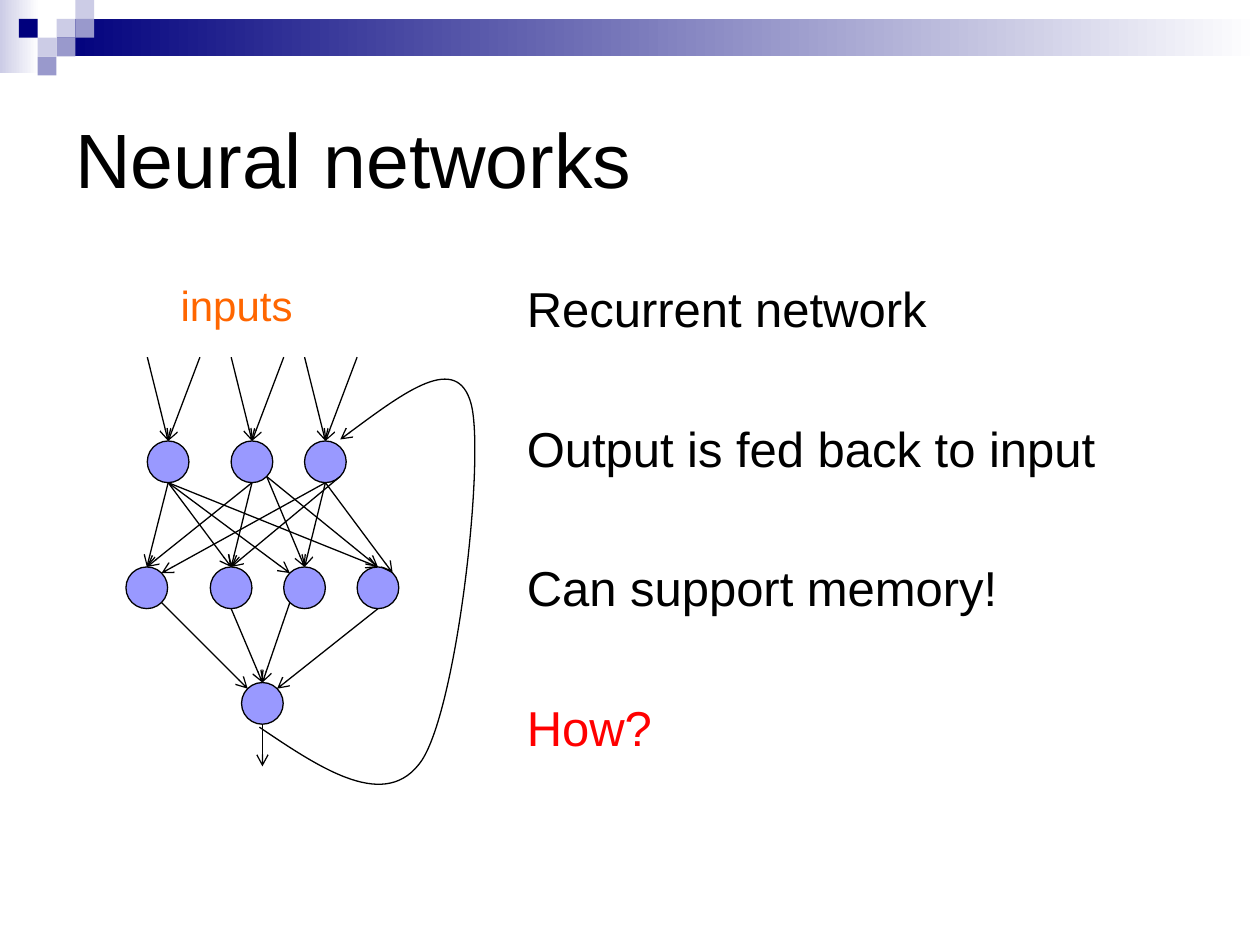
from dataclasses import dataclass
from math import sqrt

from lxml import etree
from pptx import Presentation
from pptx.dml.color import RGBColor
from pptx.enum.shapes import MSO_CONNECTOR as Conn, MSO_SHAPE as Shp
from pptx.enum.text import MSO_ANCHOR as Anchor
from pptx.oxml.ns import qn
from pptx.util import Cm, Pt

FONT = "Arial"
BLACK, NAVY, PALE, MID, WHITE = "000000", "00007D", "CCCCE6", "9999CC", "FFFFFF"
CELL = 0.38    # side of a corner square, cm
RADIUS = 0.42  # of a neuron, cm
DIAG = 1 / sqrt(2)
SIDES = {"top": (0, -1), "bottom": (0, 1), "tl": (-DIAG, -DIAG), "tr": (DIAG, -DIAG),
         "bl": (-DIAG, DIAG), "br": (DIAG, DIAG)}


@dataclass(frozen=True)
class Neuron:
    x: float
    y: float

    def at(self, side: str) -> tuple[float, float]:
        dx, dy = SIDES[side]
        return self.x + RADIUS * dx, self.y + RADIUS * dy


@dataclass(frozen=True)
class Link:
    start: int
    end: int
    leave: str = "bottom"
    enter: str = "top"


def rgb(color: str) -> RGBColor:
    return RGBColor.from_string(color)


def add_rect(s, x: float, y: float, w: float, h: float, *colors: str) -> None:
    """One colour gives a solid fill, two give a left-to-right gradient."""
    sp = s.shapes.add_shape(Shp.RECTANGLE, Cm(x), Cm(y), Cm(w), Cm(h))
    sp.shadow.inherit = False
    sp.line.fill.background()
    if len(colors) == 1:
        sp.fill.solid()
        sp.fill.fore_color.rgb = rgb(colors[0])
        return
    sp.fill.gradient()
    sp.fill.gradient_angle = 0
    for stop, color in zip(sp.fill.gradient_stops, colors):
        stop.color.rgb = rgb(color)


def add_text(s, x: float, y: float, w: float, h: float, lines: list[tuple[str, str]],
             size: float, anchor=Anchor.TOP, first: float = 0, gap: float = 0) -> None:
    tf = s.shapes.add_textbox(Cm(x), Cm(y), Cm(w), Cm(h)).text_frame
    tf.word_wrap = True
    tf.vertical_anchor = anchor
    for i, (text, color) in enumerate(lines):
        p = tf.add_paragraph() if i else tf.paragraphs[0]
        p.space_before = Pt(gap if i else first)
        r = p.add_run()
        r.text = text
        r.font.name, r.font.size = FONT, Pt(size)
        r.font.color.rgb = rgb(color)


def style_line(line) -> None:
    line.color.rgb = rgb(BLACK)
    line.width = Pt(0.75)


def add_arrowhead(sp) -> None:
    ln = sp.line._get_or_add_ln()
    etree.SubElement(ln, qn("a:tailEnd"), type="arrow")


def add_arrow(s, start: tuple[float, float], end: tuple[float, float]) -> None:
    sp = s.shapes.add_connector(Conn.STRAIGHT, *(Cm(v) for v in (*start, *end)))
    style_line(sp.line)
    add_arrowhead(sp)
    etree.SubElement(sp._element.spPr, qn("a:effectLst"))


def add_neuron(s, n: Neuron) -> None:
    sp = s.shapes.add_shape(Shp.OVAL, Cm(n.x - RADIUS), Cm(n.y - RADIUS),
                            Cm(2 * RADIUS), Cm(2 * RADIUS))
    sp.shadow.inherit = False
    sp.fill.solid()
    sp.fill.fore_color.rgb = rgb("9999FF")
    style_line(sp.line)


def add_curve(s, points: list[tuple[float, float]]) -> None:
    """Draw a Bezier path: a start point, then three points per segment."""
    pts = [(Cm(x), Cm(y)) for x, y in points]
    fb = s.shapes.build_freeform(*pts[0])
    fb.add_line_segments(pts[1:], close=False)
    sp = fb.convert_to_shape()
    sp.shadow.inherit = False
    sp.fill.background()
    style_line(sp.line)
    add_arrowhead(sp)
    # Turn every three line steps into one cubic segment
    outline = next(sp._element.iter(qn("a:path")))
    steps = outline.findall(qn("a:lnTo"))
    for i in range(0, len(steps), 3):
        cubic = etree.SubElement(outline, qn("a:cubicBezTo"))
        for step in steps[i:i + 3]:
            cubic.append(step[0])
            outline.remove(step)


INPUTS = [Neuron(x, 9.31) for x in (3.39, 5.08, 6.56)]
HIDDEN = [Neuron(x, 11.85) for x in (2.96, 4.66, 6.14, 7.62)]
OUTPUT = Neuron(5.29, 14.18)

INPUT_LINKS = [
    Link(0, 0), Link(0, 1), Link(0, 2, enter="tl"), Link(0, 3),
    Link(1, 0), Link(1, 1), Link(1, 2, "br"), Link(1, 3, "br"),
    Link(2, 0, enter="tr"), Link(2, 1, "br"), Link(2, 2), Link(2, 3, enter="tr"),
]
OUTPUT_LINKS = [Link(0, 0, "br", "tl"), Link(1, 0), Link(2, 0, "bl"),
                Link(3, 0, enter="tr")]
FEEDBACK = [(5.23, 14.66), (6.5, 15.52), (7.8, 16.38), (8.51, 15.32), (9.22, 14.22),
            (9.78, 9.25), (9.5, 8.15), (9.22, 7.09), (8.05, 7.98), (6.86, 8.86)]
# Column, row and colour of the corner squares
SQUARES = [(3, 1, PALE), (4, 0, PALE), (4, 1, MID), (2, 2, PALE),
           (1, 1, NAVY), (3, 2, MID), (2, 3, MID)]


def main() -> None:
    prs = Presentation()
    prs.slide_width, prs.slide_height = Cm(25.4), Cm(19.05)
    s = prs.slides.add_slide(prs.slide_layouts[6])

    # Header decoration
    add_rect(s, 0, 0, 0.79, 1.47, PALE, WHITE)
    add_rect(s, 3 * CELL, CELL, 25.4 - 3 * CELL, 2 * CELL, NAVY, WHITE)
    for col, row, color in SQUARES:
        add_rect(s, col * CELL, row * CELL, CELL, CELL, color)

    # Title and key points
    add_text(s, 1.27, 1.27, 22.86, 3.81, [("Neural networks", BLACK)], 44, Anchor.MIDDLE)
    add_text(s, 10.37, 5.5, 13.76, 10.8,
             [("Recurrent network", BLACK), ("Output is fed back to input", BLACK),
              ("Can support memory!", BLACK), ("How?", "FF0000")],
             28, first=5.6, gap=46)

    # Neurons
    for n in (*INPUTS, *HIDDEN, OUTPUT):
        add_neuron(s, n)

    # Signals into, through and out of the network
    for n in INPUTS:
        for dx in (-RADIUS, 0.64):
            add_arrow(s, (n.x + dx, 7.2), n.at("top"))
    for sources, targets, links in ((INPUTS, HIDDEN, INPUT_LINKS),
                                    (HIDDEN, [OUTPUT], OUTPUT_LINKS)):
        for k in links:
            add_arrow(s, sources[k.start].at(k.leave), targets[k.end].at(k.enter))
    add_arrow(s, OUTPUT.at("bottom"), (OUTPUT.x, 15.45))

    # Feedback loop and label
    add_curve(s, FEEDBACK)
    add_text(s, 3.39, 5.5, 4.66, 1.27, [("inputs", "FF6600")], 24)

    prs.save("out.pptx")


if __name__ == "__main__":
    main()
